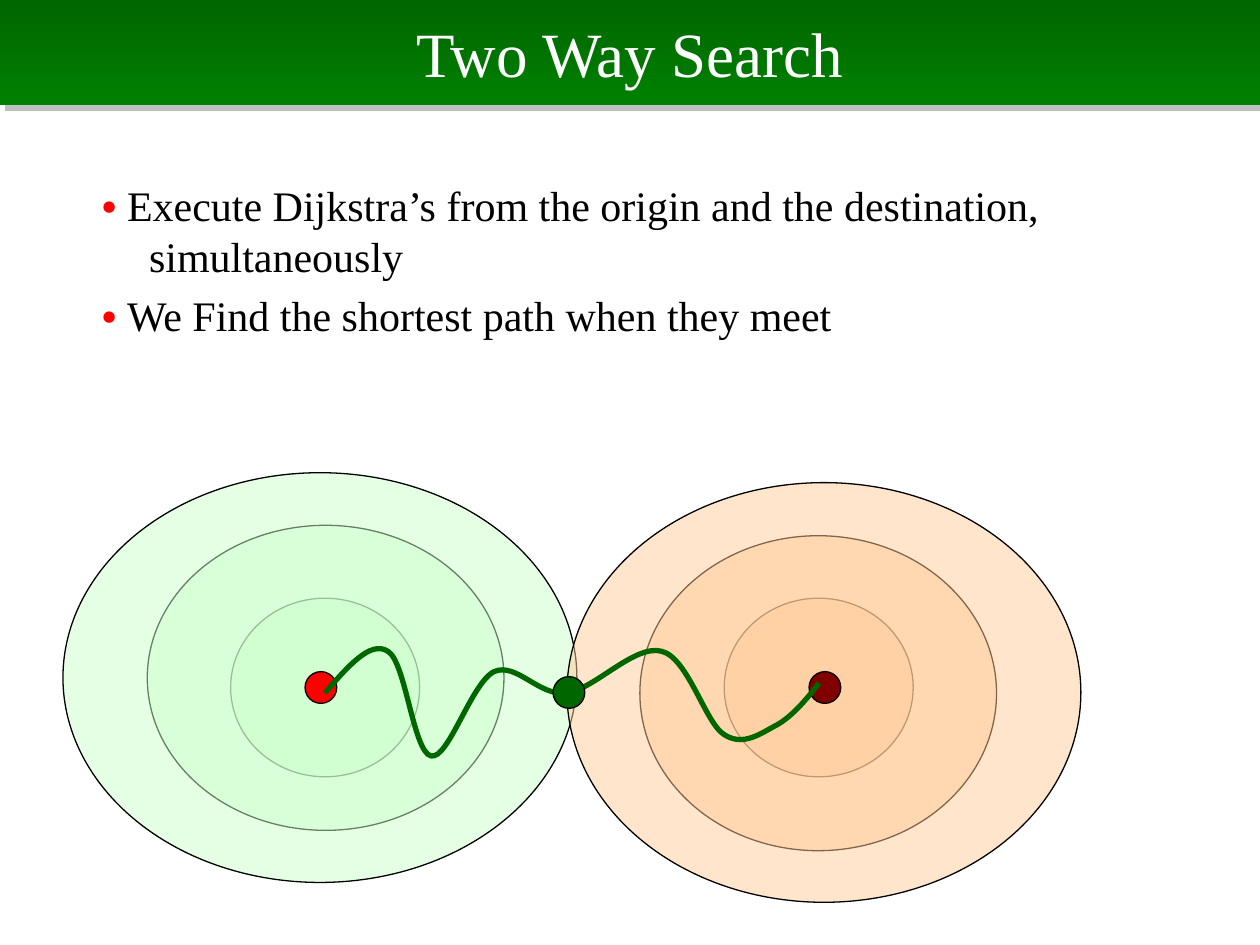
from dataclasses import dataclass

from pptx import Presentation
from pptx.dml.color import RGBColor
from pptx.enum.shapes import MSO_SHAPE
from pptx.enum.text import MSO_ANCHOR, MSO_AUTO_SIZE, PP_ALIGN
from pptx.oxml import parse_xml
from pptx.oxml.ns import nsdecls, qn
from pptx.util import Cm, Pt

ELLIPSE = MSO_SHAPE.OVAL
MIDDLE = MSO_ANCHOR.MIDDLE
TOP = MSO_ANCHOR.TOP
CENTER = PP_ALIGN.CENTER
NO_AUTOFIT = MSO_AUTO_SIZE.NONE


@dataclass(frozen=True)
class Theme:
    font: str = "Times New Roman"
    title_size: float = 36
    body_size: float = 24
    outline_width: float = 0.75
    route_width: float = 3
    white: str = "FFFFFF"
    ink: str = "000000"
    shadow: str = "808080"
    green: str = "006600"
    band_end: str = "008000"
    red: str = "FF0000"
    maroon: str = "800000"
    origin_ring: str = "CCFFCC"
    destination_ring: str = "FFCC99"


def write_text(paragraph, text, *, font, size, color, bold=False):
    run = paragraph.add_run()
    run.text = text
    run.font.name = font
    run.font.size = Pt(size)
    run.font.bold = bold
    run.font.color.rgb = RGBColor.from_string(color)


class SlideBuilder:
    def __init__(self, slide, theme):
        self.slide = slide
        self.theme = theme

    def place(self, placeholder, left, top, width, height, anchor):
        placeholder.left, placeholder.top = Cm(left), Cm(top)
        placeholder.width, placeholder.height = Cm(width), Cm(height)
        frame = placeholder.text_frame
        frame.auto_size = NO_AUTOFIT
        frame.vertical_anchor = anchor
        return frame

    def title(self, text, *box):
        theme = self.theme
        band = self.slide.shapes.title
        heading = self.place(band, *box, MIDDLE).paragraphs[0]
        heading.alignment = CENTER
        write_text(heading, text, font=theme.font, size=theme.title_size, color=theme.white)
        band.fill.gradient()
        band.fill.gradient_angle = 270
        for stop, color in zip(band.fill.gradient_stops, (theme.green, theme.band_end)):
            stop.color.rgb = RGBColor.from_string(color)
        band._element.spPr.append(parse_xml(
            f'<a:effectLst {nsdecls("a")}>'
            f'<a:outerShdw dist="{Pt(4.2)}" dir="2700000" algn="ctr" rotWithShape="0">'
            f'<a:srgbClr val="{theme.shadow}"><a:alpha val="50000"/></a:srgbClr>'
            '</a:outerShdw></a:effectLst>'))

    def bullets(self, items, *box):
        theme = self.theme
        frame = self.place(self.slide.placeholders[1], *box, TOP)
        for index, item in enumerate(items):
            paragraph = frame.add_paragraph() if index else frame.paragraphs[0]
            properties = paragraph._p.get_or_add_pPr()
            properties.set("marL", str(Cm(0.95)))
            properties.set("indent", str(-Cm(0.95)))
            properties.append(parse_xml(f'<a:buNone {nsdecls("a")}/>'))
            write_text(paragraph, "• ", font=theme.font, size=theme.body_size,
                       color=theme.red, bold=True)
            write_text(paragraph, item, font=theme.font, size=theme.body_size, color=theme.ink)

    def ellipse(self, left, top, width, height, color, opacity=100):
        oval = self.slide.shapes.add_shape(ELLIPSE, Cm(left), Cm(top), Cm(width), Cm(height))
        oval.shadow.inherit = False
        oval.fill.solid()
        oval.fill.fore_color.rgb = RGBColor.from_string(color)
        if opacity < 100:
            fill_color = oval._element.spPr.find(qn("a:solidFill"))[0]
            fill_color.append(parse_xml(f'<a:alpha {nsdecls("a")} val="{opacity * 1000}"/>'))
        self.outline(oval, self.theme.ink, self.theme.outline_width)

    def dot(self, left, top, color):
        self.ellipse(left, top, 0.64, 0.64, color)

    def curve(self, points, color, width):
        start, *rest = [(Cm(x), Cm(y)) for x, y in points]
        builder = self.slide.shapes.build_freeform(*start)
        builder.add_line_segments(rest, close=False)
        route = builder.convert_to_shape()
        segments = list(route._element.iter(qn("a:lnTo")))
        for first in range(0, len(segments), 3):
            bezier = parse_xml(f'<a:cubicBezTo {nsdecls("a")}/>')
            segments[first].addprevious(bezier)
            for segment in segments[first:first + 3]:
                bezier.append(segment[0])
                segment.getparent().remove(segment)
        route.shadow.inherit = False
        route.fill.background()
        self.outline(route, color, width)

    def outline(self, shape, color, width):
        shape.line.color.rgb = RGBColor.from_string(color)
        shape.line.width = Pt(width)


def main():
    theme = Theme()
    deck = Presentation()
    deck.slide_width, deck.slide_height = Cm(25.4), Cm(19.05)
    page = SlideBuilder(deck.slides.add_slide(deck.slide_layouts[1]), theme)

    page.title("Two Way Search", 0, 0, 25.4, 2.12)
    page.bullets([
        "Execute Dijkstra’s from the origin and the destination, simultaneously",
        "We Find the shortest path when they meet",
    ], 1.8, 3.5, 21.8, 3.3)

    search_steps = [
        ((4.65, 12.06, 3.81, 3.6), (14.6, 12.06, 3.81, 3.6)),
        ((2.97, 10.59, 7.19, 6.15), (12.9, 10.8, 7.19, 6.35)),
        ((1.27, 9.53, 10.36, 8.26), (11.43, 9.73, 10.36, 8.46)),
    ]
    for origin_area, destination_area in search_steps:
        page.ellipse(*origin_area, theme.origin_ring, opacity=50)
        page.ellipse(*destination_area, theme.destination_ring, opacity=50)

    page.dot(6.15, 13.54, theme.red)
    page.dot(16.31, 13.54, theme.maroon)

    shortest_route = [
        (6.55, 13.97),
        (7.01, 13.44), (7.47, 12.9), (7.82, 13.13),
        (8.18, 13.34), (8.33, 15.16), (8.69, 15.24),
        (9.04, 15.32), (9.5, 13.77), (9.96, 13.54),
        (10.41, 13.34), (10.87, 14.05), (11.43, 13.97),
        (11.99, 13.89), (12.8, 12.98), (13.34, 13.13),
        (13.87, 13.26), (14.22, 14.58), (14.6, 14.81),
        (14.99, 15.06), (15.34, 14.78), (15.67, 14.61),
        (15.98, 14.43), (16.26, 14.1), (16.51, 13.77),
    ]
    page.curve(shortest_route, theme.green, theme.route_width)
    page.dot(11.15, 13.64, theme.green)

    deck.save("out.pptx")


if __name__ == "__main__":
    main()
